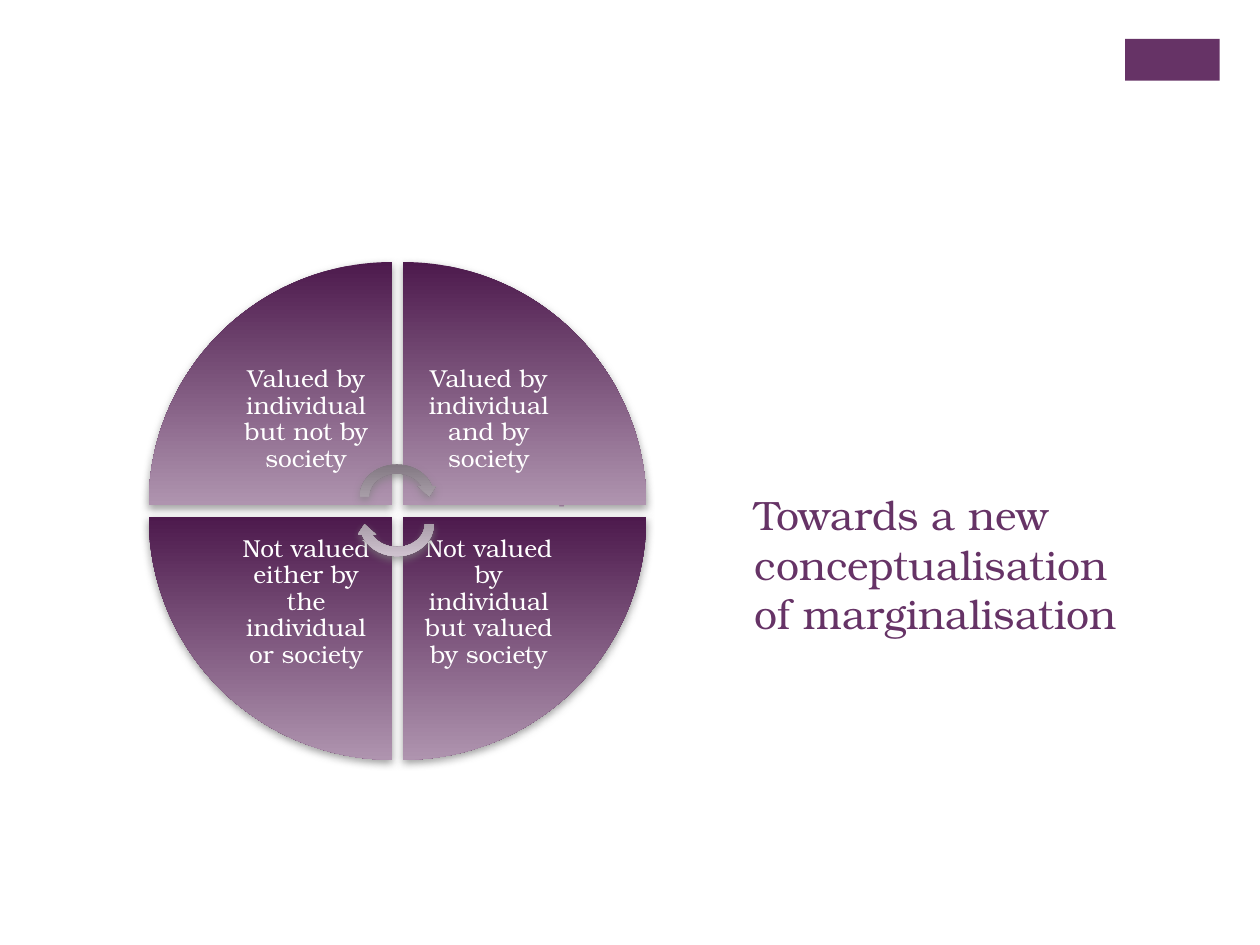
from dataclasses import dataclass

import lxml.etree
import pptx
import pptx.dml.color
import pptx.enum.shapes
import pptx.enum.text
import pptx.oxml.ns
import pptx.util

Inches = pptx.util.Inches
Pt = pptx.util.Pt
RGB = pptx.dml.color.RGBColor.from_string
MSO_SHAPE = pptx.enum.shapes.MSO_SHAPE
ANCHOR = pptx.enum.text.MSO_ANCHOR
ALIGN = pptx.enum.text.PP_ALIGN
qn = pptx.oxml.ns.qn


@dataclass(frozen=True)
class Theme:
    font: str = "TeX Gyre Bonum"
    accent: str = "663366"
    plus: str = "B870B8"
    light: str = "FFFFFF"
    shadow: str = "808080"
    wedge: tuple[str, str] = ("4D1A4D", "AF94AF")
    arrow: tuple[str, str] = ("7D737D", "D4C8D4")
    title_size: float = 23.4
    plus_size: float = 24
    label_size: float = 14


@dataclass(frozen=True)
class Quadrant:
    label: str
    column: int
    row: int
    rotation: int


@dataclass(frozen=True)
class CycleArrow:
    top: float
    rotation: int


THEME = Theme()
QUADRANTS = [
    Quadrant("Valued by individual but not by society", 0, 0, 0),
    Quadrant("Valued by individual and by society", 1, 0, 90),
    Quadrant("Not valued by individual but valued by society", 1, 1, 180),
    Quadrant("Not valued either by the individual or society", 0, 1, 270),
]
CYCLE_ARROWS = [CycleArrow(3.65, 0), CycleArrow(3.87, 180)]
MATRIX_LEFT, MATRIX_TOP = 1.18, 2.08
WEDGE_SIZE, WEDGE_STEP, LABEL_SIZE = 1.93, 2.02, 1.36


def box(left: float, top: float, width: float, height: float) -> tuple:
    return tuple(Inches(length) for length in (left, top, width, height))


def apply_format(target, values: dict) -> None:
    for attribute, value in values.items():
        setattr(target, attribute, value)


def write_text(holder, text: str, size: float, color: str, anchor, inset: tuple[float, float],
               paragraph_format: dict, bold: bool = False) -> None:
    across, down = map(Inches, inset)
    frame = holder.text_frame
    apply_format(frame, {
        "text": text, "word_wrap": True, "vertical_anchor": anchor,
        "auto_size": pptx.enum.text.MSO_AUTO_SIZE.NONE,
        "margin_left": across, "margin_right": across,
        "margin_top": down, "margin_bottom": down,
    })
    paragraph = frame.paragraphs[0]
    apply_format(paragraph, paragraph_format)
    font = paragraph.runs[0].font
    apply_format(font, {"name": THEME.font, "size": Pt(size), "bold": bold})
    font.color.rgb = RGB(color)


def add_shadow(shape) -> None:
    shape.shadow.inherit = False
    effects = shape._element.spPr.find(qn("a:effectLst"))
    outer = lxml.etree.SubElement(effects, qn("a:outerShdw"), {
        "blurRad": str(Pt(5)), "dist": str(Pt(2)), "dir": "5400000", "rotWithShape": "0"})
    tint = lxml.etree.SubElement(outer, qn("a:srgbClr"), val=THEME.shadow)
    lxml.etree.SubElement(tint, qn("a:alpha"), val="75000")


def add_gradient_shape(group, preset, place: tuple, rotation: int, colors: tuple[str, str]) -> None:
    shape = group.shapes.add_shape(preset, *place)
    shape.rotation = rotation
    shape.fill.gradient()
    shape.fill.gradient_angle = 270
    for stop, color, position in zip(shape.fill.gradient_stops, colors, (0, 1)):
        stop.color.rgb = RGB(color)
        stop.position = position
    shape._element.spPr.find(qn("a:gradFill")).set("rotWithShape", "0")
    shape.line.fill.background()
    add_shadow(shape)


def add_quadrant(group, quadrant: Quadrant) -> None:
    left = MATRIX_LEFT + quadrant.column * WEDGE_STEP
    top = MATRIX_TOP + quadrant.row * WEDGE_STEP
    add_gradient_shape(group, MSO_SHAPE.PIE_WEDGE, box(left, top, WEDGE_SIZE, WEDGE_SIZE),
                       quadrant.rotation, THEME.wedge)
    shift = WEDGE_SIZE - LABEL_SIZE
    label = group.shapes.add_textbox(*box(left + shift * (1 - quadrant.column),
                                          top + shift * (1 - quadrant.row),
                                          LABEL_SIZE, LABEL_SIZE))
    write_text(label, quadrant.label, THEME.label_size, THEME.light, ANCHOR.MIDDLE, (0.11, 0.11),
               {"alignment": ALIGN.CENTER, "line_spacing": 0.9})


def main() -> None:
    deck = pptx.Presentation()
    apply_format(deck, {"slide_width": Inches(10), "slide_height": Inches(7.5)})
    slide = deck.slides.add_slide(deck.slide_layouts[5])

    corner = slide.shapes.add_shape(MSO_SHAPE.RECTANGLE, *box(8.93, 0.31, 0.75, 0.33))
    corner.fill.solid()
    corner.fill.fore_color.rgb = RGB(THEME.accent)
    corner.line.fill.background()
    corner.shadow.inherit = False

    plus = slide.shapes.add_textbox(*box(4.36, 3.69, 0.24, 0.4))
    write_text(plus, "+", THEME.plus_size, THEME.plus, ANCHOR.TOP, (0, 0), {}, bold=True)

    title = slide.shapes.title
    apply_format(title, dict(zip(("left", "top", "width", "height"), box(5.89, 4.16, 3.32, 0.95))))
    write_text(title, "Towards a new conceptualisation of marginalisation", THEME.title_size,
               THEME.accent, ANCHOR.BOTTOM, (0.1, 0.05), {"alignment": ALIGN.LEFT})

    matrix = slide.shapes.add_group_shape()
    for quadrant in QUADRANTS:
        add_quadrant(matrix, quadrant)
    for arrow in CYCLE_ARROWS:
        add_gradient_shape(matrix, MSO_SHAPE.CIRCULAR_ARROW, box(2.82, arrow.top, 0.66, 0.58),
                           arrow.rotation, THEME.arrow)

    deck.save("out.pptx")


if __name__ == "__main__":
    main()
